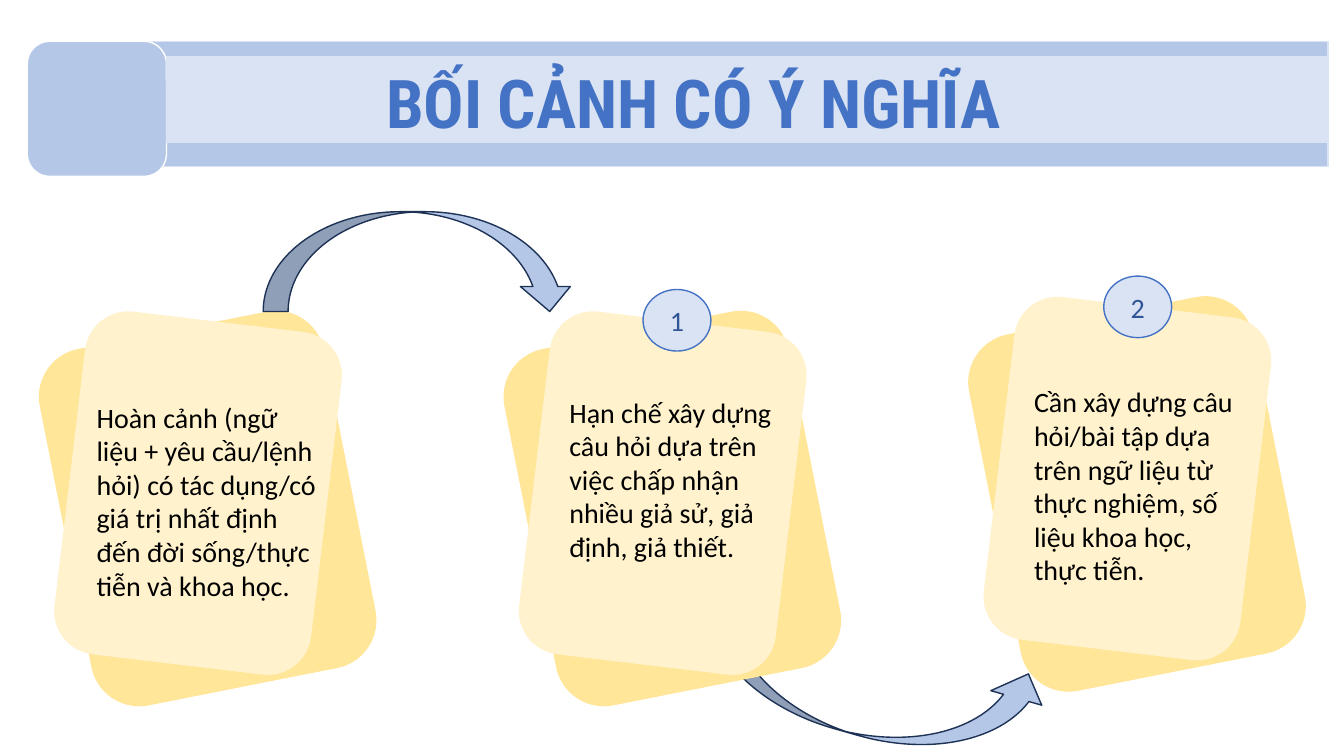
from pptx import Presentation
from pptx.dml.color import RGBColor
from pptx.enum.shapes import MSO_SHAPE
from pptx.enum.text import MSO_ANCHOR, PP_ALIGN
from pptx.util import Pt

RECTANGLE = MSO_SHAPE.RECTANGLE
ROUNDED = MSO_SHAPE.ROUNDED_RECTANGLE
OVAL = MSO_SHAPE.OVAL
ARROW_DOWN = MSO_SHAPE.CURVED_DOWN_ARROW
ARROW_UP = MSO_SHAPE.CURVED_UP_ARROW
LEFT, CENTER = PP_ALIGN.LEFT, PP_ALIGN.CENTER
TOP, MIDDLE = MSO_ANCHOR.TOP, MSO_ANCHOR.MIDDLE

WHITE = RGBColor(0xFF, 0xFF, 0xFF)
BLACK = RGBColor(0x00, 0x00, 0x00)
BLUE = RGBColor(0x44, 0x72, 0xC4)
DARK_BLUE = RGBColor(0x2F, 0x55, 0x97)
NAVY = RGBColor(0x1E, 0x32, 0x56)
SOFT_BLUE = RGBColor(0xB4, 0xC7, 0xE7)
PALE_BLUE = RGBColor(0xDA, 0xE3, 0xF3)
YELLOW = RGBColor(0xFF, 0xE6, 0x99)
CREAM = RGBColor(0xFF, 0xF2, 0xCC)

TITLE_FONT, BODY_FONT = "Roboto Condensed", "Calibri"

CARD_LEFT, CARD_STEP = 45.4, 331.9
CARD_WIDTH, CARD_HEIGHT = 205.9, 258.5

# Per card: top, badge, badge offset, text offset and width, text
CARDS = [
    (234, None, None, (16.5, 48.2, 172.8),
     "Hoàn cảnh (ngữ liệu + yêu cầu/lệnh hỏi) có tác dụng/có giá trị "
     "nhất định đến đời sống/thực tiễn và khoa học."),
    (234, "1", (82, -27.2), (22.3, 44.6, 172.8),
     "Hạn chế xây dựng câu hỏi dựa trên việc chấp nhận nhiều giả sử, "
     "giả định, giả thiết."),
    (223.6, "2", (79.2, -26.4), (22.3, 47.8, 166.3),
     "Cần xây dựng câu hỏi/bài tập dựa trên ngữ liệu từ thực nghiệm, "
     "số liệu khoa học, thực tiễn."),
]


def add_block(slide, kind, box, fill, line, rotation=0):
    shape = slide.shapes.add_shape(kind, *map(Pt, box))
    shape.shadow.inherit = False
    shape.fill.solid()
    shape.fill.fore_color.rgb = fill
    shape.line.color.rgb = line
    shape.line.width = Pt(1)
    shape.rotation = rotation
    return shape


def write(shape, text, size, color, font=BODY_FONT, bold=False,
          align=LEFT, anchor=TOP):
    frame = shape.text_frame
    frame.word_wrap = True
    frame.vertical_anchor = anchor
    frame.text = text
    paragraph = frame.paragraphs[0]
    paragraph.alignment = align
    for run in paragraph.runs:
        run.font.name = font
        run.font.size = Pt(size)
        run.font.bold = bold
        run.font.color.rgb = color


def add_header(slide, left, top, width, title):
    # Band, rounded tab and inner strip
    add_block(slide, RECTANGLE, (left + 51, top, width - 51, 89.3),
              SOFT_BLUE, PALE_BLUE)
    add_block(slide, ROUNDED, (left, top, 99.4, 96.5), SOFT_BLUE, WHITE)
    add_block(slide, RECTANGLE, (left + 99.4, top + 10.8, width - 99.4, 61.2),
              PALE_BLUE, PALE_BLUE)
    # Title
    title_box = slide.shapes.add_textbox(Pt(left + 224), Pt(top + 10.8),
                                         Pt(504), Pt(65.4))
    write(title_box, title, 48, BLUE, TITLE_FONT, True, CENTER)


def add_card_sheets(slide, left, top, width, height):
    add_block(slide, ROUNDED, (left, top, width, height),
              YELLOW, YELLOW, -11.2)
    add_block(slide, ROUNDED, (left + 4.3, top - 4.5, width - 22.3, height - 13),
              CREAM, CREAM, 6.8)


def add_card_content(slide, left, top, badge, badge_offset, text_place, text):
    # Numbered badge
    if badge:
        x, y = badge_offset
        circle = add_block(slide, OVAL, (left + x, top + y, 48.5, 44),
                           PALE_BLUE, BLUE)
        write(circle, badge, 20, DARK_BLUE, align=CENTER, anchor=MIDDLE)
    # Body text
    x, y, text_width = text_place
    text_box = slide.shapes.add_textbox(Pt(left + x), Pt(top + y),
                                        Pt(text_width), Pt(152.6))
    write(text_box, text, 20, BLACK)


def main():
    presentation = Presentation()
    presentation.slide_width, presentation.slide_height = Pt(960), Pt(540)
    slide = presentation.slides.add_slide(presentation.slide_layouts[6])

    # The upward arrow lies behind the cards, the downward one in front
    add_block(slide, ARROW_UP, (491, 450, 256.3, 75.6), SOFT_BLUE, NAVY, 15.9)
    add_header(slide, 19.5, 29.5, 929, "BỐI CẢNH CÓ Ý NGHĨA")
    lefts = [CARD_LEFT + index * CARD_STEP for index in range(len(CARDS))]
    for left, (top, *_) in zip(lefts, CARDS):
        add_card_sheets(slide, left, top, CARD_WIDTH, CARD_HEIGHT)
    add_block(slide, ARROW_DOWN, (188, 151.2, 222.5, 71.3), SOFT_BLUE, NAVY)
    for left, card in zip(lefts, CARDS):
        add_card_content(slide, left, *card)

    presentation.save("out.pptx")


if __name__ == "__main__":
    main()
